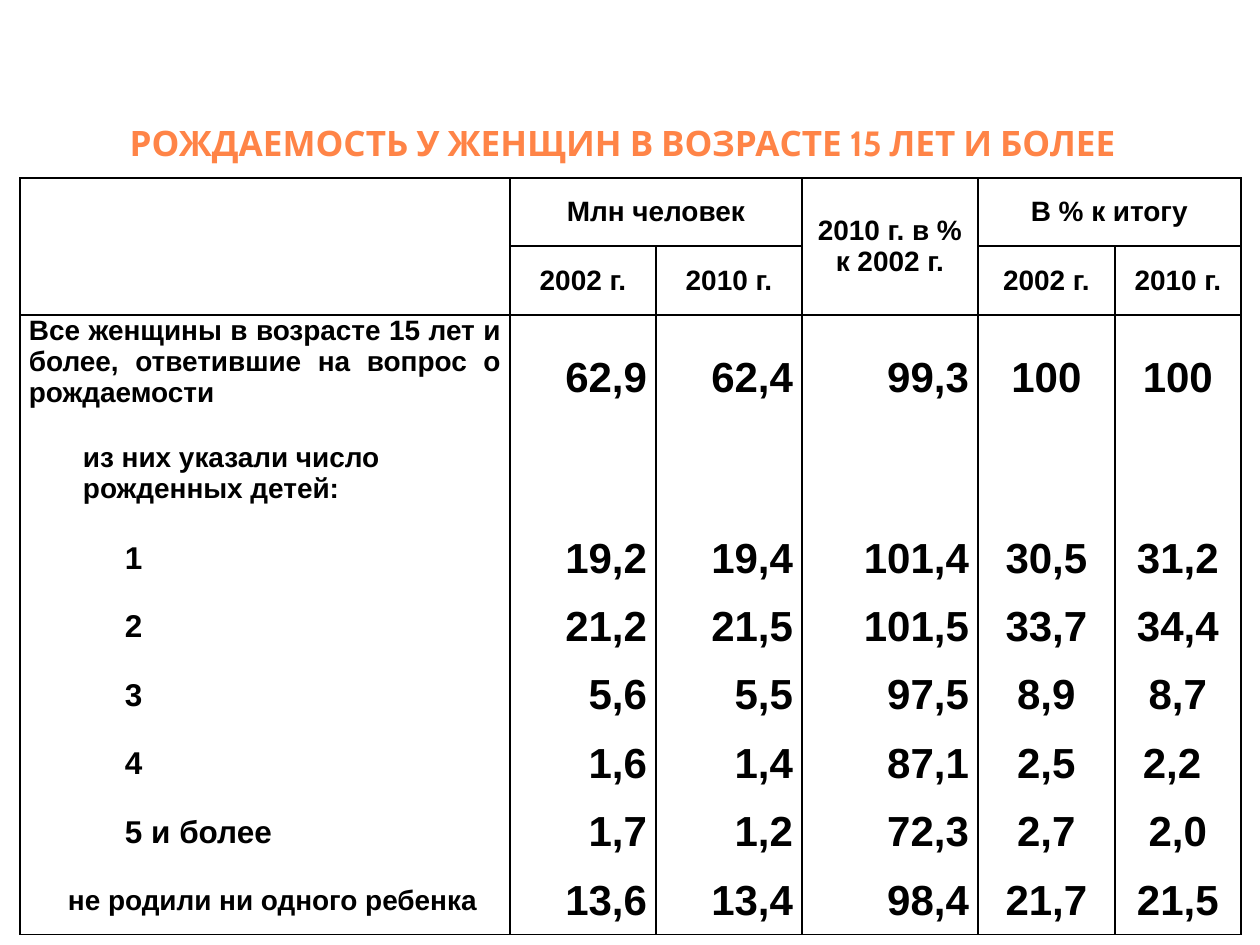
from lxml import etree
from pptx import Presentation
from pptx.dml.color import RGBColor
from pptx.enum.text import MSO_ANCHOR, PP_ALIGN
from pptx.oxml.ns import qn
from pptx.util import Pt

PX = 914400 // 126
ORANGE = RGBColor(0xFF, 0x84, 0x47)
BLACK = RGBColor(0, 0, 0)
CENTER, RIGHT, JUSTIFY = PP_ALIGN.CENTER, PP_ALIGN.RIGHT, PP_ALIGN.JUSTIFY
TOP, MIDDLE = MSO_ANCHOR.TOP, MSO_ANCHOR.MIDDLE

COLUMNS = [490, 146, 146, 176, 137, 126]
ROWS = [68, 69, 127, 83, 68, 68, 69, 68, 69, 68]
HEADER = [
    ["", "Млн человек", "", "2010 г. в % к 2002 г.", "В % к итогу", ""],
    ["", "2002 г.", "2010 г.", "", "2002 г.", "2010 г."],
]
MERGES = [(0, 0, 1, 0), (0, 1, 0, 2), (0, 3, 1, 3), (0, 4, 0, 5)]
# label, label size, label indent, label anchor, values
BODY = [
    ("Все женщины в возрасте 15 лет и более, ответившие на вопрос о рождаемости",
     16, 0, TOP, ["62,9", "62,4", "99,3", "100", "100"]),
    ("из них указали число\nрожденных детей:", 16, 54, TOP, [""] * 5),
    ("1", 18, 96, MIDDLE, ["19,2", "19,4", "101,4", "30,5", "31,2"]),
    ("2", 18, 96, MIDDLE, ["21,2", "21,5", "101,5", "33,7", "34,4"]),
    ("3", 18, 96, MIDDLE, ["5,6", "5,5", "97,5", "8,9", "8,7"]),
    ("4", 18, 96, MIDDLE, ["1,6", "1,4", "87,1", "2,5", "2,2 "]),
    ("5 и более", 18, 96, MIDDLE, ["1,7", "1,2", "72,3", "2,7", "2,0"]),
    ("не родили ни одного ребенка", 16, 39, MIDDLE,
     ["13,6", "13,4", "98,4", "21,7", "21,5"]),
]
VALUE_ALIGN = [RIGHT, RIGHT, RIGHT, CENTER, CENTER]


class SlideBuilder:
    def __init__(self, slide):
        self.s = slide
        self.font = {"name": "Arial", "bold": True}

    def add_text(self, tf, text, align, size, color=BLACK, indent=0, **extra):
        for i, line in enumerate(text.split("\n")):
            p = tf.paragraphs[0] if i == 0 else tf.add_paragraph()
            p.alignment = align
            if indent:
                p._p.get_or_add_pPr().set("marL", str(indent * PX))
            if not line:
                continue
            r = p.add_run()
            r.text = line
            for key, value in {**self.font, "size": Pt(size), **extra}.items():
                setattr(r.font, key, value)
            r.font.color.rgb = color

    def title(self, x, y, w, h, text):
        sp = self.s.shapes.add_textbox(x * PX, y * PX, w * PX, h * PX)
        sp.text_frame.word_wrap = True
        self.add_text(sp.text_frame, text, CENTER, 20, ORANGE, name="Cabin")

    def table(self, x, y, columns, rows):
        frame = self.s.shapes.add_table(len(rows), len(columns), x * PX, y * PX,
                                        sum(columns) * PX, sum(rows) * PX)
        table = frame.table
        table.first_row = table.horz_banding = False
        for column, width in zip(table.columns, columns):
            column.width = width * PX
        for row, height in zip(table.rows, rows):
            row.height = height * PX
        return table

    def cell(self, cell, text, align, size, sides, anchor=MIDDLE, indent=0):
        cell.margin_left = cell.margin_right = 9 * PX
        cell.margin_top = cell.margin_bottom = 0
        cell.vertical_anchor = anchor
        cell.fill.background()
        self.borders(cell, sides)
        self.add_text(cell.text_frame, text, align, size, indent=indent)

    def borders(self, cell, sides):
        tc_pr = cell._tc.get_or_add_tcPr()
        for i, side in enumerate("LRTB"):
            ln = etree.Element(qn(f"a:ln{side}"), w=str(Pt(1)))
            if side in sides:
                fill = etree.SubElement(ln, qn("a:solidFill"))
                etree.SubElement(fill, qn("a:srgbClr"), val=str(BLACK))
            else:
                etree.SubElement(ln, qn("a:noFill"))
            tc_pr.insert(i, ln)


def main():
    prs = Presentation()
    prs.slide_width, prs.slide_height = 1260 * PX, 945 * PX
    builder = SlideBuilder(prs.slides.add_slide(prs.slide_layouts[6]))

    # Title
    builder.title(29, 115, 1187, 55, "РОЖДАЕМОСТЬ У ЖЕНЩИН В ВОЗРАСТЕ 15 ЛЕТ И БОЛЕЕ")

    # Table header: a covered cell has no line on the side where it is joined
    table = builder.table(20, 178, COLUMNS, ROWS)
    joined = {}
    for top, left, bottom, right in MERGES:
        table.cell(top, left).merge(table.cell(bottom, right))
        joined[bottom, right] = "T" if bottom > top else "L"
    for r, texts in enumerate(HEADER):
        for c, text in enumerate(texts):
            sides = "LRTB".replace(joined.get((r, c), " "), "")
            builder.cell(table.cell(r, c), text, CENTER, 16, sides)

    # Table body: column lines throughout, row lines only at the two ends
    last = len(ROWS) - 1
    for r, (label, size, indent, anchor, values) in enumerate(BODY, len(HEADER)):
        sides = "LR" + ("T" if r == len(HEADER) else "") + ("B" if r == last else "")
        builder.cell(table.cell(r, 0), label, JUSTIFY, size, sides, anchor, indent)
        for c, (value, align) in enumerate(zip(values, VALUE_ALIGN), 1):
            builder.cell(table.cell(r, c), value, align, 24, sides)

    prs.save("out.pptx")


if __name__ == "__main__":
    main()
